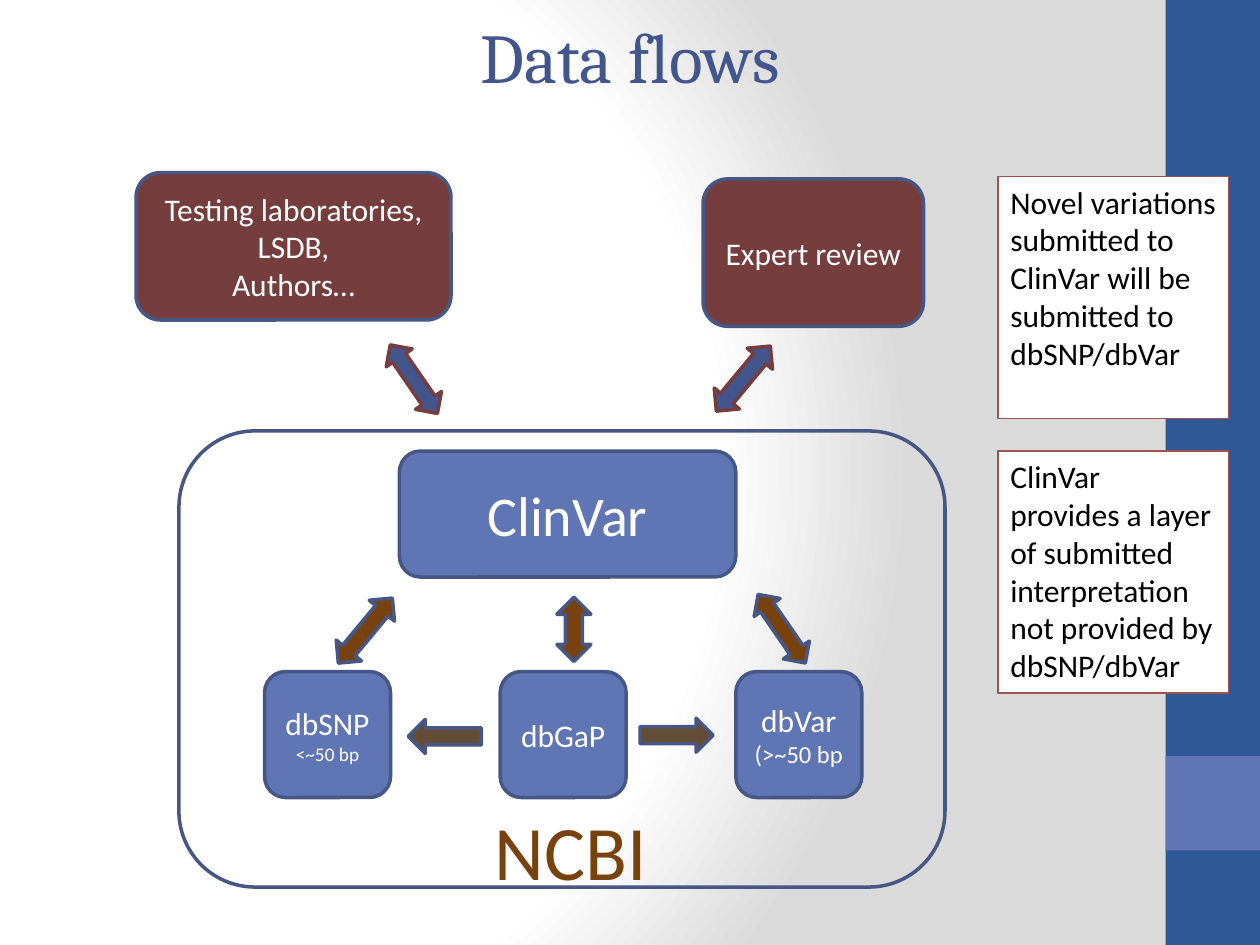
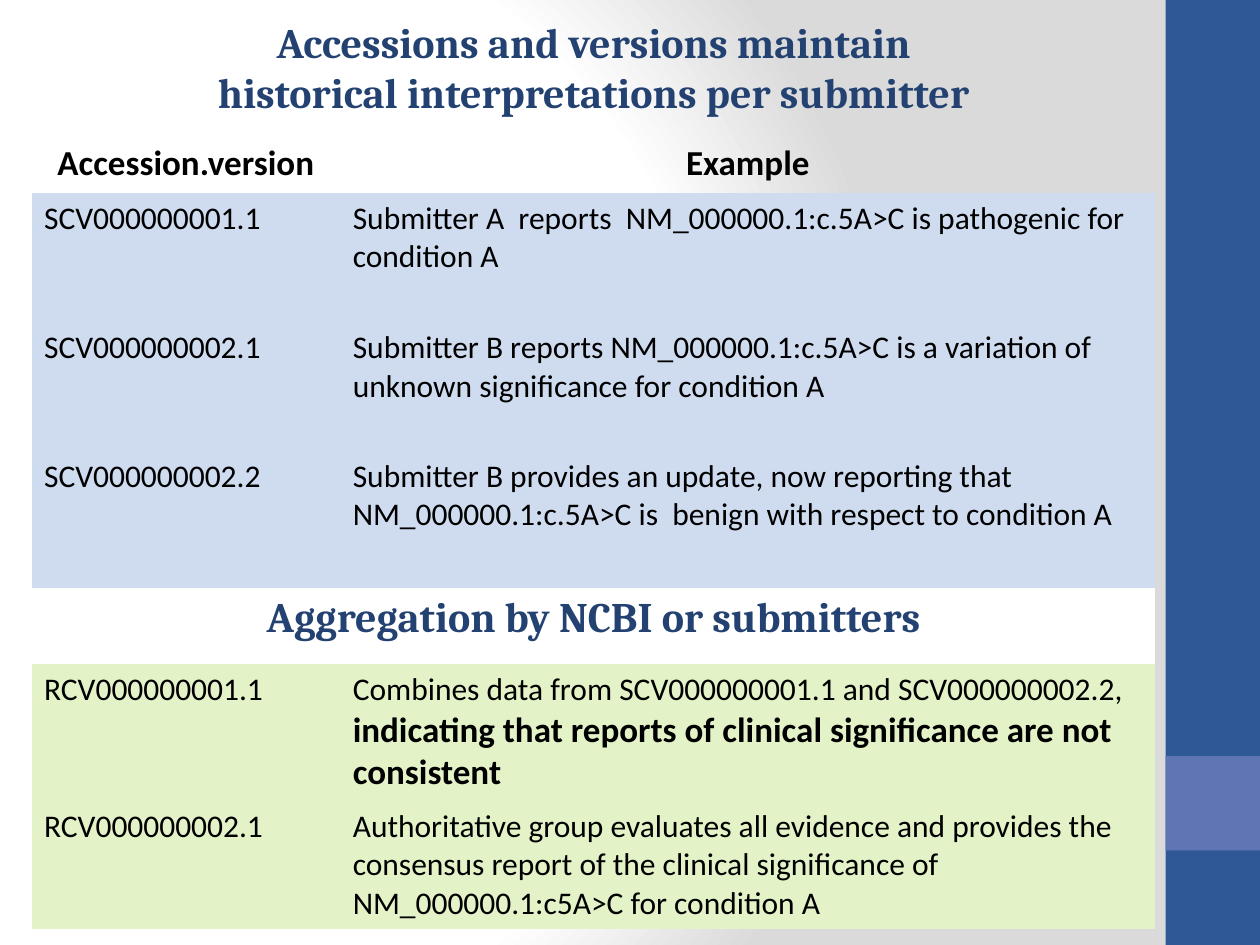
import pptx
import pptx.dml.color
import pptx.enum.shapes
import pptx.enum.text
import pptx.oxml
import pptx.oxml.ns
import pptx.util

Inches = pptx.util.Inches
Kind = pptx.enum.shapes.MSO_SHAPE
Align = pptx.enum.text.PP_ALIGN
Anchor = pptx.enum.text.MSO_ANCHOR

NAVY, BLUE, SLATE, EDGE = "2F5897", "6076B4", "42568D", "475785"
WINE, BROWN, DARK, RED = "753D3D", "77420D", "634D36", "9C5252"
INK, BLACK, WHITE, SKY, LIME = "234271", "000000", "FFFFFF", "CFDCF0", "E3F2C7"
PLAIN = "{2D5ABB26-0587-4C30-8999-92F81FD0307C}"

BANDS = [((9.25, 0, 0.75, 7.5), NAVY), ((9.25, 6, 0.75, 0.75), BLUE)]

FLOW = "Data flows"
SOURCES = [
    ((1.08, 1.37, 2.5, 1.17), ["Testing laboratories,", "LSDB,", "Authors…"]),
    ((5.58, 1.42, 1.75, 1.17), ["Expert review"]),
]
STORES = [
    ["dbSNP", [("<~50 bp", {"size": 11})]],
    ["dbGaP"],
    ["dbVar", [("(>~50 bp", {"size": 14})]],
]
ARROWS = [
    (Kind.UP_DOWN_ARROW, (2.77, 4.67, 0.26, 0.67), 39.7, BROWN, EDGE),
    (Kind.UP_DOWN_ARROW, (4.42, 4.74, 0.27, 0.51), 0, BROWN, EDGE),
    (Kind.UP_DOWN_ARROW, (6.08, 4.66, 0.25, 0.66), 325.5, BROWN, EDGE),
    (Kind.UP_DOWN_ARROW, (5.77, 2.67, 0.26, 0.67), 39.7, SLATE, WINE),
    (Kind.UP_DOWN_ARROW, (3.16, 2.68, 0.25, 0.66), 325.5, SLATE, WINE),
    (Kind.RIGHT_ARROW, (5.08, 5.7, 0.58, 0.27), 0, DARK, EDGE),
    (Kind.RIGHT_ARROW, (3.24, 5.71, 0.58, 0.27), 180, DARK, EDGE),
]
NOTES = [
    "Novel variations submitted to ClinVar will be submitted to dbSNP/dbVar",
    "ClinVar provides a layer of submitted interpretation not provided by dbSNP/dbVar",
]

HISTORY = ["Accessions and versions maintain", "historical interpretations per submitter"]
HEADS = ["Accession.version", "Example"]
MERGE = "Aggregation by NCBI or submitters"
WIDTHS = [2.45, 6.47]
ROWS = [
    (0.45, None, HEADS),
    (1.03, SKY, ["SCV000000001.1",
                 "Submitter A  reports  NM_000000.1:c.5A>C is pathogenic for condition A"]),
    (1.02, SKY, ["SCV000000002.1",
                 "Submitter B reports NM_000000.1:c.5A>C is a variation of "
                 "unknown significance for condition A"]),
    (1.09, SKY, ["SCV000000002.2",
                 "Submitter B provides an update, now reporting that "
                 "NM_000000.1:c.5A>C is  benign with respect to condition A"]),
    (0.6, WHITE, [MERGE]),
    (1.09, LIME, ["RCV000000001.1",
                  [("Combines data from SCV000000001.1 and SCV000000002.2, ", {}),
                   ("indicating that reports of clinical significance are not consistent",
                    {"size": 20, "bold": True})]]),
    (1.01, LIME, ["RCV000000002.1",
                  "Authoritative group evaluates all evidence and provides the consensus "
                  "report of the clinical significance of NM_000000.1:c5A>C for condition A"]),
]
HEAD = {"size": 20, "bold": True, "align": Align.CENTER}
BANNER = {"size": 24, "bold": True, "font": "Cambria", "color": INK, "align": Align.CENTER}


def tint(code):
    return pptx.dml.color.RGBColor.from_string(code)


def write(frame, lines, align=Align.LEFT, **base):
    for i, line in enumerate(lines):
        para = frame.paragraphs[0] if i == 0 else frame.add_paragraph()
        para.alignment = align
        for text, extra in [(line, {})] if isinstance(line, str) else line:
            look = {"size": 18, "color": BLACK, "font": "Calibri", "bold": False, **base, **extra}
            run = para.add_run()
            run.text = text
            run.font.size = pptx.util.Pt(look["size"])
            run.font.name = look["font"]
            run.font.bold = look["bold"]
            run.font.color.rgb = tint(look["color"])


def place(box):
    return [Inches(n) for n in box]


def draw(slide, kind, box, fill=None, line=None, width=2, turn=0):
    shape = slide.shapes.add_shape(kind, *place(box))
    shape.shadow.inherit = False
    shape.rotation = turn
    if fill:
        shape.fill.solid()
        shape.fill.fore_color.rgb = tint(fill)
    else:
        shape.fill.background()
    if line:
        shape.line.color.rgb = tint(line)
        shape.line.width = pptx.util.Pt(width)
    else:
        shape.line.fill.background()
    return shape


def node(slide, box, fill, lines, size=18):
    shape = draw(slide, Kind.ROUNDED_RECTANGLE, box, fill, EDGE)
    shape.text_frame.vertical_anchor = Anchor.MIDDLE
    write(shape.text_frame, lines, align=Align.CENTER, size=size, color=WHITE)


def head(slide, box, lines, **look):
    title = slide.shapes.title
    title.left, title.top, title.width, title.height = place(box)
    frame = title.text_frame
    frame.auto_size = pptx.enum.text.MSO_AUTO_SIZE.NONE
    frame.vertical_anchor = Anchor.TOP
    write(frame, lines, **look)


def dress(layout, slide):
    stops = "".join(
        f'<a:gs pos="{spot * 1000}"><a:srgbClr val="{code}"/></a:gs>'
        for spot, code in [(0, WHITE), (75, WHITE), (100, "DADADA")])
    back = pptx.oxml.parse_xml(
        f'<p:bg {pptx.oxml.ns.nsdecls("p", "a")}><p:bgPr><a:gradFill rotWithShape="1">'
        f'<a:gsLst>{stops}</a:gsLst><a:path path="circle">'
        '<a:fillToRect l="20000" t="50000" r="100000" b="50000"/></a:path>'
        '</a:gradFill><a:effectLst/></p:bgPr></p:bg>')
    page = layout.element.cSld
    page.insert(0, back)
    for box, fill in BANDS:
        page.spTree.append(draw(slide, Kind.RECTANGLE, box, fill).element)


def flow(slide):
    head(slide, (3.64, 0.06, 2.72, 0.77), [FLOW], size=40, font="Cambria",
         color=SLATE, align=Align.CENTER)
    slide.shapes.title.text_frame.word_wrap = False
    draw(slide, Kind.ROUNDED_RECTANGLE, (1.42, 3.42, 6.08, 3.62), line=EDGE)
    node(slide, (3.17, 3.58, 2.67, 1), BLUE, ["ClinVar"], size=32)
    for i, lines in enumerate(STORES):
        node(slide, (2.1 + 1.87 * i, 5.33, 1, 1), BLUE, lines)
    for box, lines in SOURCES:
        node(slide, box, WINE, lines)
    label = slide.shapes.add_textbox(*place((3.83, 6.33, 1.42, 0.84)))
    label.text_frame.word_wrap = False
    write(label.text_frame, ["NCBI"], size=44, color=BROWN)
    for kind, box, turn, fill, line in ARROWS:
        draw(slide, kind, box, fill, line, turn=turn)
    for i, text in enumerate(NOTES):
        note = draw(slide, Kind.RECTANGLE, (7.92, 1.4 + 2.18 * i, 1.83, 1.92), WHITE, RED, 0.75)
        note.text_frame.word_wrap = True
        note.text_frame.vertical_anchor = Anchor.TOP
        write(note.text_frame, [text])


def history(slide):
    head(slide, (0.25, 0.08, 8.92, 0.91), HISTORY, **BANNER)
    tall = sum(row[0] for row in ROWS)
    graph = slide.shapes.add_table(len(ROWS), 2, *place((0.25, 1.08, 8.92, tall)))
    for mark in graph.element.iter(pptx.oxml.ns.qn("a:tableStyleId")):
        mark.text = PLAIN
    table = graph.table
    table.first_row = table.horz_banding = False
    for col, width in zip(table.columns, WIDTHS):
        col.width = Inches(width)
    for r, (height, fill, texts) in enumerate(ROWS):
        table.rows[r].height = Inches(height)
        if len(texts) == 1:
            table.cell(r, 0).merge(table.cell(r, 1))
        look = HEAD if r == 0 else BANNER if len(texts) == 1 else {}
        for c, text in enumerate(texts):
            cell = table.cell(r, c)
            write(cell.text_frame, [text], **look)
            if fill:
                cell.fill.solid()
                cell.fill.fore_color.rgb = tint(fill)
            else:
                cell.fill.background()


def main():
    deck = pptx.Presentation()
    deck.slide_width, deck.slide_height = Inches(10), Inches(7.5)
    layout = deck.slide_layouts[5]
    first, second = [deck.slides.add_slide(layout) for _ in range(2)]
    dress(layout, first)
    flow(first)
    history(second)
    deck.save("out.pptx")


if __name__ == "__main__":
    main()
